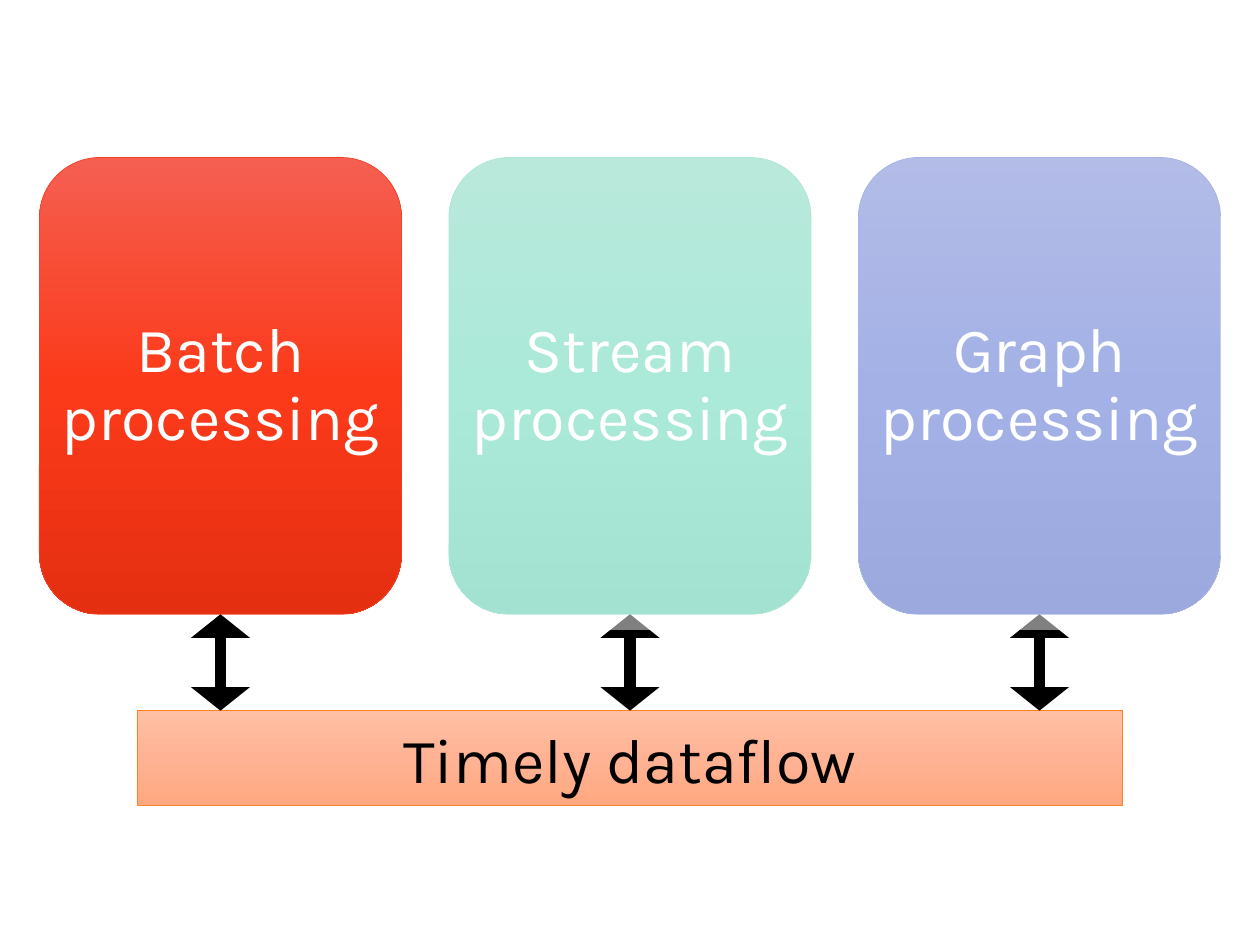
import copy

import lxml.etree
import pptx
import pptx.dml.color
import pptx.enum.shapes
import pptx.enum.text
import pptx.oxml.ns
import pptx.util

PX = 9525
FONT = "Karla"
COLORS = {
    "white": "FFFFFF",
    "black": "000000",
    "red": ("F55F51", "FB3A1A", "E52F11"),
    "red_line": "F14124",
    "green": ("73D4B8", "57D4B2", "47C3A1"),
    "green_line": "5DCEAF",
    "blue": ("687ACF", "4863CE", "3954BE"),
    "blue_line": "4E67C8",
    "orange": ("FFBFA3", "FFB394", "FFA881"),
    "orange_line": "FF8021",
}
SHAPE = pptx.enum.shapes.MSO_SHAPE
rgb = pptx.dml.color.RGBColor.from_string
qn = pptx.oxml.ns.qn


def write(shape, text, color="white", size=48, spacing=None, inset=None):
    frame = shape.text_frame
    frame.word_wrap = True
    frame.vertical_anchor = pptx.enum.text.MSO_ANCHOR.MIDDLE
    if inset is not None:
        frame.margin_left = frame.margin_right = inset * PX
        frame.margin_top = frame.margin_bottom = inset * PX
    para = frame.paragraphs[0]
    para.alignment = pptx.enum.text.PP_ALIGN.CENTER
    para.line_spacing = spacing
    span = para.add_run()
    span.text = text
    span.font.name = FONT
    span.font.size = pptx.util.Pt(size)
    span.font.color.rgb = rgb(COLORS[color])


def add_gradient_box(kind, left, top, width, height, color):
    box = page.shapes.add_shape(kind, left * PX, top * PX, width * PX, height * PX)
    box.shadow.inherit = False
    box.fill.gradient()
    box.fill.gradient_angle = 270
    stop_list = box.element.spPr.find(".//" + qn("a:gsLst"))
    stop_list.insert(1, copy.deepcopy(stop_list[0]))
    for stop, position, value in zip(box.fill.gradient_stops, (0, 0.5, 1), COLORS[color]):
        stop.position = position
        stop.color.rgb = rgb(value)
    box.line.color.rgb = rgb(COLORS[color + "_line"])
    box.line.width = pptx.util.Pt(0.5)
    return box


deck = pptx.Presentation()
deck.slide_width = 1280 * PX
deck.slide_height = 960 * PX
page = deck.slides.add_slide(deck.slide_layouts[6])

card_left, card_top, card_width, card_height, card_pitch = 40, 160, 368, 464, 416
bar_top = 722

cards = []
for index, (name, color) in enumerate((("Batch", "red"), ("Stream", "green"), ("Graph", "blue"))):
    left = card_left + index * card_pitch
    card = add_gradient_box(SHAPE.ROUNDED_RECTANGLE, left, card_top, card_width, card_height, color)
    write(card, f"{name} processing", spacing=0.9, inset=0)
    cards.append(card)

bar = add_gradient_box(SHAPE.RECTANGLE, 140, bar_top, 1000, 96, "orange")
write(bar, "Timely dataflow", color="black")

for card in cards:
    center = card.left + card.width // 2
    arrow = page.shapes.add_connector(
        pptx.enum.shapes.MSO_CONNECTOR.STRAIGHT,
        center, card.top + card.height, center, bar_top * PX,
    )
    arrow.begin_connect(card, 2)
    if center == bar.left + bar.width // 2:
        arrow.end_connect(bar, 0)
    arrow.line.color.rgb = rgb(COLORS["black"])
    arrow.line.width = pptx.util.Pt(9)
    properties = arrow.element.spPr
    outline = properties.find(qn("a:ln"))
    for end in ("a:headEnd", "a:tailEnd"):
        lxml.etree.SubElement(outline, qn(end), type="triangle", w="lg", len="sm")
    lxml.etree.SubElement(properties, qn("a:effectLst"))

veil = page.shapes.add_shape(SHAPE.RECTANGLE, 432 * PX, 104 * PX, 1032 * PX, 536 * PX)
veil.shadow.inherit = False
veil.fill.solid()
veil.fill.fore_color.rgb = rgb(COLORS["white"])
veil.line.fill.background()
veil_color = veil.element.spPr.find(qn("a:solidFill")).find(qn("a:srgbClr"))
lxml.etree.SubElement(veil_color, qn("a:alpha"), val="50000")

deck.save("out.pptx")
